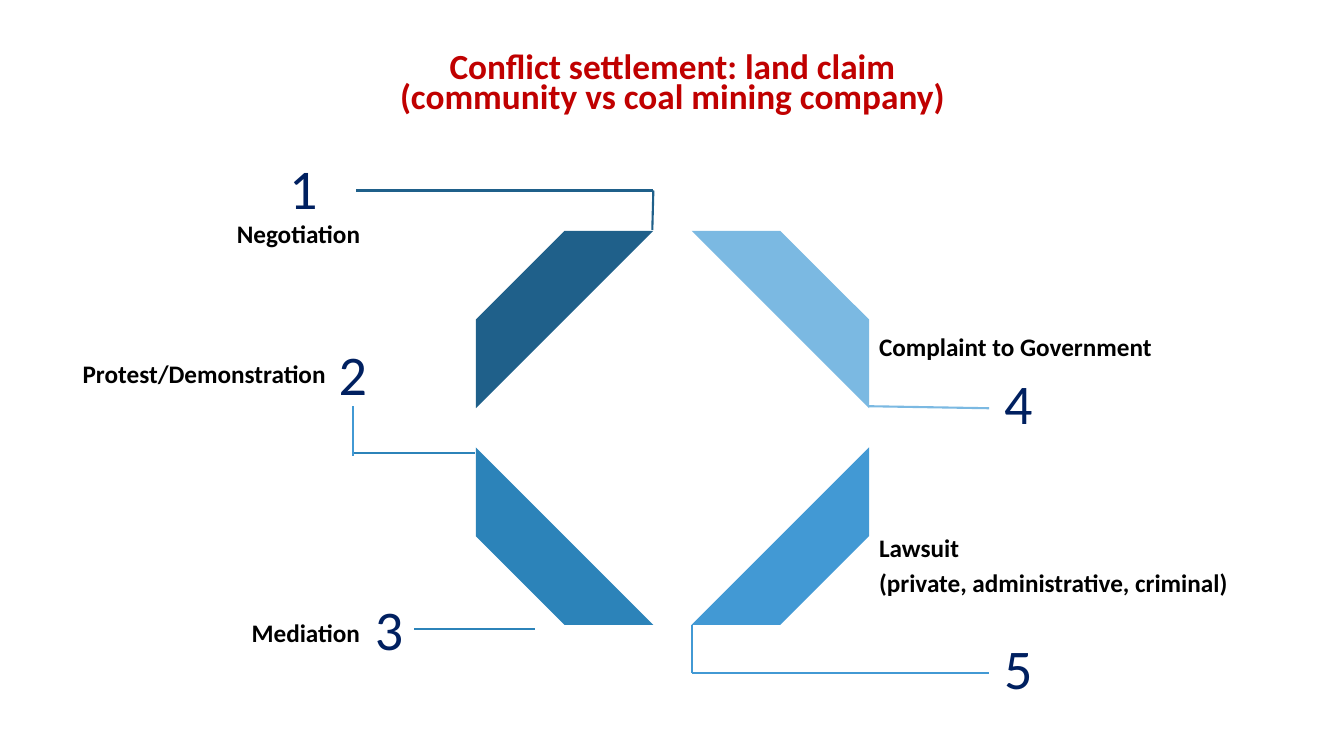
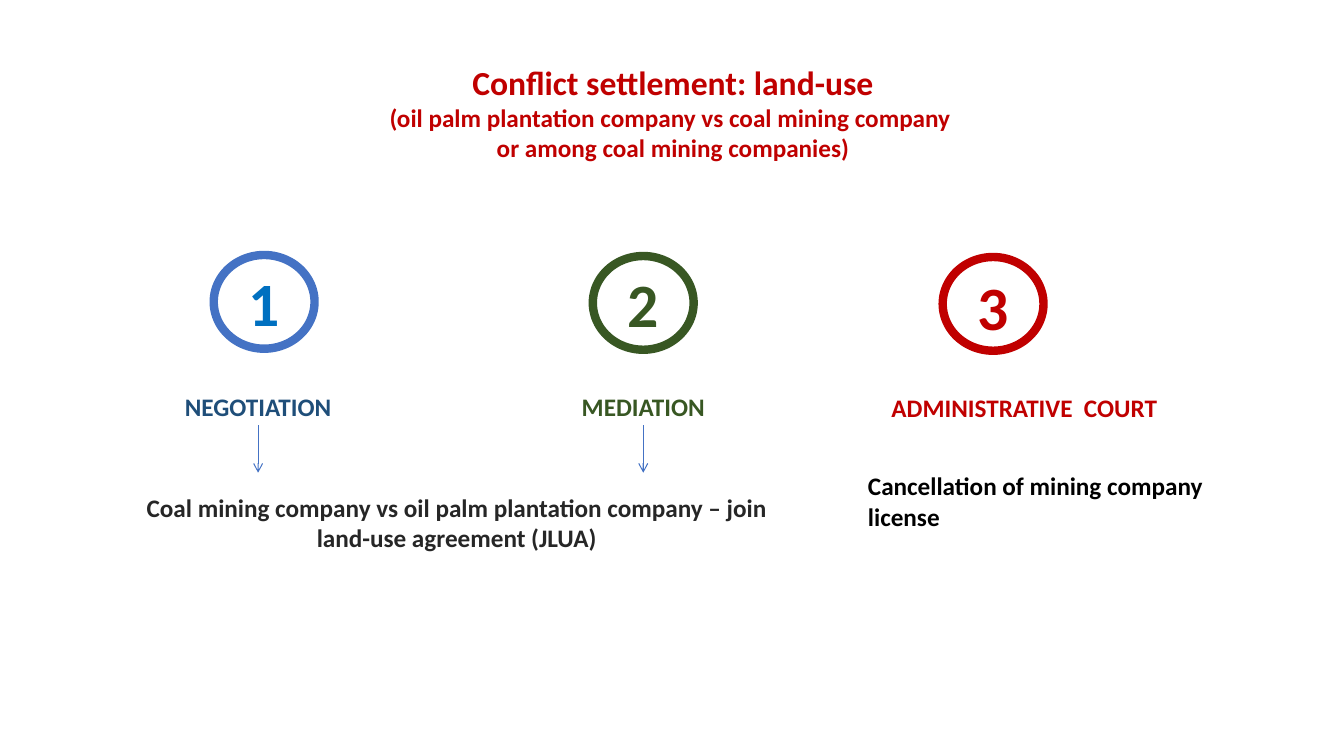
from copy import deepcopy
from dataclasses import dataclass
from itertools import product
from typing import Optional

from pptx import Presentation
from pptx.dml.color import RGBColor
from pptx.enum.shapes import MSO_CONNECTOR, MSO_SHAPE
from pptx.enum.text import MSO_ANCHOR, MSO_AUTO_SIZE, PP_ALIGN as AL
from pptx.oxml.ns import qn
from pptx.util import Pt
from lxml.etree import SubElement

PX = 9144
FONT = "Calibri"
RED = "C00000"
NAVY = "002060"
BLACK = "000000"
GREEN = "385723"
ACCENT = "4472C4"
TEAL, STEEL, AZURE, SKY = "1F608A", "2C83B9", "4299D4", "7BB9E2"
DEFAULT_INSET = (10, 5)
LABEL_INSET = (7, 3)


@dataclass(frozen=True)
class Box:
    x: int
    y: int
    w: int
    h: int

    def emu(self) -> tuple[int, ...]:
        return tuple(v * PX for v in (self.x, self.y, self.w, self.h))


@dataclass(frozen=True)
class Run:
    text: str
    size: float
    breaks: bool = False


@dataclass(frozen=True)
class Label:
    box: Box
    lines: tuple[str, ...]
    align: Optional[AL] = None
    color: str = BLACK
    size: int = 18
    bold: bool = True
    inset: tuple[int, int] = DEFAULT_INSET
    before: float = 0
    wrap: bool = True


@dataclass(frozen=True)
class Line:
    x1: int
    y1: int
    x2: int
    y2: int
    color: str
    width: float = 1.5


@dataclass(frozen=True)
class Step:
    x: int
    y: int
    number_y: int
    ring: str
    number: str
    name: Label
    arrow: bool


def rgb(value: str) -> RGBColor:
    return RGBColor.from_string(value)


def add_run(p, text: str, size: float, color: str, bold: bool):
    r = p.add_run()
    r.text = text
    f = r.font
    f.name, f.size, f.bold = FONT, Pt(size), bold
    f.color.rgb = rgb(color)
    return r


def set_inset(tf, inset: tuple[int, int]) -> None:
    tf.margin_left = tf.margin_right = inset[0] * PX
    tf.margin_top = tf.margin_bottom = inset[1] * PX


def add_title(s, box: Box, paragraphs: list[list[Run]],
              inset: tuple[int, int], spacing: float) -> None:
    sp = s.shapes.title
    sp.left, sp.top, sp.width, sp.height = box.emu()
    tf = sp.text_frame
    tf.word_wrap = True
    tf.auto_size = MSO_AUTO_SIZE.NONE
    tf.vertical_anchor = MSO_ANCHOR.MIDDLE
    set_inset(tf, inset)
    for i, runs in enumerate(paragraphs):
        p = tf.add_paragraph() if i else tf.paragraphs[0]
        p.alignment = AL.CENTER
        p.line_spacing = spacing
        for run in runs:
            r = add_run(p, run.text, run.size, RED, True)
            if run.breaks:
                p.add_line_break()
                p._p[-1].append(deepcopy(r._r.rPr))


def add_label(s, label: Label):
    sp = s.shapes.add_textbox(*label.box.emu())
    tf = sp.text_frame
    tf.word_wrap = label.wrap
    tf.auto_size = MSO_AUTO_SIZE.SHAPE_TO_FIT_TEXT
    set_inset(tf, label.inset)
    for i, line in enumerate(label.lines):
        p = tf.add_paragraph() if i else tf.paragraphs[0]
        p.alignment = label.align
        if label.before:
            p.space_before = Pt(label.before)
        add_run(p, line, label.size, label.color, label.bold)
    return sp


def add_line(s, line: Line, arrow: bool = False):
    ends = (v * PX for v in (line.x1, line.y1, line.x2, line.y2))
    cxn = s.shapes.add_connector(MSO_CONNECTOR.STRAIGHT, *ends)
    cxn.line.color.rgb = rgb(line.color)
    cxn.line.width = Pt(line.width)
    if arrow:
        SubElement(cxn.line._get_or_add_ln(), qn("a:tailEnd"), type="arrow")
    SubElement(cxn._element.spPr, qn("a:effectLst"))
    return cxn


def add_stripe(s, box: Box, color: str, flip_h: bool, flip_v: bool) -> None:
    sp = s.shapes.add_shape(MSO_SHAPE.DIAGONAL_STRIPE, *box.emu())
    sp.shadow.inherit = False
    sp.fill.solid()
    sp.fill.fore_color.rgb = rgb(color)
    sp.line.fill.background()
    xfrm = sp._element.spPr.xfrm
    for name, flipped in (("flipH", flip_h), ("flipV", flip_v)):
        if flipped:
            xfrm.set(name, "1")


def add_ring(s, box: Box, color: str) -> None:
    sp = s.shapes.add_shape(MSO_SHAPE.OVAL, *box.emu())
    sp.shadow.inherit = False
    sp.fill.background()
    sp.line.color.rgb = rgb(color)
    sp.line.width = Pt(6)


def add_step(s, number: int, step: Step) -> None:
    add_ring(s, Box(step.x, step.y, 100, 93), step.ring)
    add_label(s, Label(Box(step.x + 20, step.number_y, 60, 84), (str(number),),
                       AL.CENTER, step.number, 44, wrap=False))
    name = add_label(s, step.name)
    if step.arrow:
        b = step.name.box
        x, y = b.x + b.w // 2, b.y + b.h
        cxn = add_line(s, Line(x, y, x, y + 47, ACCENT, 0.75), arrow=True)
        cxn.begin_connect(name, 2)


def build_land_claim(s) -> None:
    add_title(s, Box(92, 48, 1150, 74),
              [[Run("Conflict settlement: land claim", 25.2, True),
                Run("(community vs coal mining company)", 25.2)]],
              DEFAULT_INSET, 0.7)

    corners = product((False, True), repeat=2)
    for (low, right), color in zip(corners, (TEAL, SKY, STEEL, AZURE)):
        box = Box(686 if right else 472, 444 if low else 229, 176, 176)
        add_stripe(s, box, color, right, low)

    for line in (
        Line(647, 228, 648, 189, TEAL),
        Line(648, 189, 353, 189, TEAL),
        Line(862, 403, 981, 405, SKY),
        Line(411, 624, 531, 624, STEEL),
        Line(686, 620, 686, 668, AZURE),
        Line(686, 668, 981, 668, AZURE),
        Line(351, 449, 471, 449, STEEL),
        Line(350, 403, 350, 452, AZURE),
    ):
        add_line(s, line)

    numbers = ((277, 147), (326, 332), (362, 585), (986, 361), (986, 624))
    for n, (x, y) in enumerate(numbers, 1):
        add_label(s, Label(Box(x, y, 77, 77), (str(n),), AL.JUSTIFY, NAVY, 40, False))

    for label in (
        Label(Box(144, 212, 223, 40), ("Negotiation",), AL.RIGHT),
        Label(Box(30, 351, 303, 40), ("Protest/Demonstration",), AL.RIGHT),
        Label(Box(73, 608, 294, 40), ("Mediation",), AL.RIGHT),
        Label(Box(862, 324, 380, 40), ("Complaint to Government",)),
        Label(Box(862, 523, 380, 107),
              ("Lawsuit", "(private, administrative, criminal)"), before=3.6),
    ):
        add_label(s, label)


def build_land_use(s) -> None:
    add_title(s, Box(169, 88, 997, 47),
              [[Run("Conflict settlement: land-use", 24, True),
                Run("(oil palm plantation company vs coal mining company ", 18)],
               [Run("or among coal mining companies)", 18)]],
              (0, 4), 1.0)

    def name(x: int, y: int, w: int, text: str, color: str) -> Label:
        return Label(Box(x, y, w, 37), (text,), AL.CENTER, color, inset=LABEL_INSET)

    steps = (
        Step(212, 253, 258, ACCENT, "0070C0",
             name(59, 385, 394, "NEGOTIATION", "1F4E79"), True),
        Step(588, 254, 259, GREEN, GREEN,
             name(504, 385, 268, "MEDIATION", GREEN), True),
        Step(935, 255, 262, RED, RED,
             name(851, 386, 330, "ADMINISTRATIVE  COURT", RED), False),
    )
    for n, step in enumerate(steps, 1):
        add_step(s, n, step)

    add_label(s, Label(
        Box(127, 485, 652, 67),
        ("Coal mining company vs oil palm plantation company – join "
         "land-use agreement (JLUA)",),
        AL.CENTER, "262626", inset=LABEL_INSET))
    add_label(s, Label(Box(851, 462, 411, 71),
                       ("Cancellation of mining company license",)))


def main() -> None:
    prs = Presentation()
    prs.slide_width, prs.slide_height = 1333 * PX, 750 * PX
    title_only = prs.slide_layouts[5]
    for build in (build_land_claim, build_land_use):
        build(prs.slides.add_slide(title_only))
    prs.save("out.pptx")


if __name__ == "__main__":
    main()
